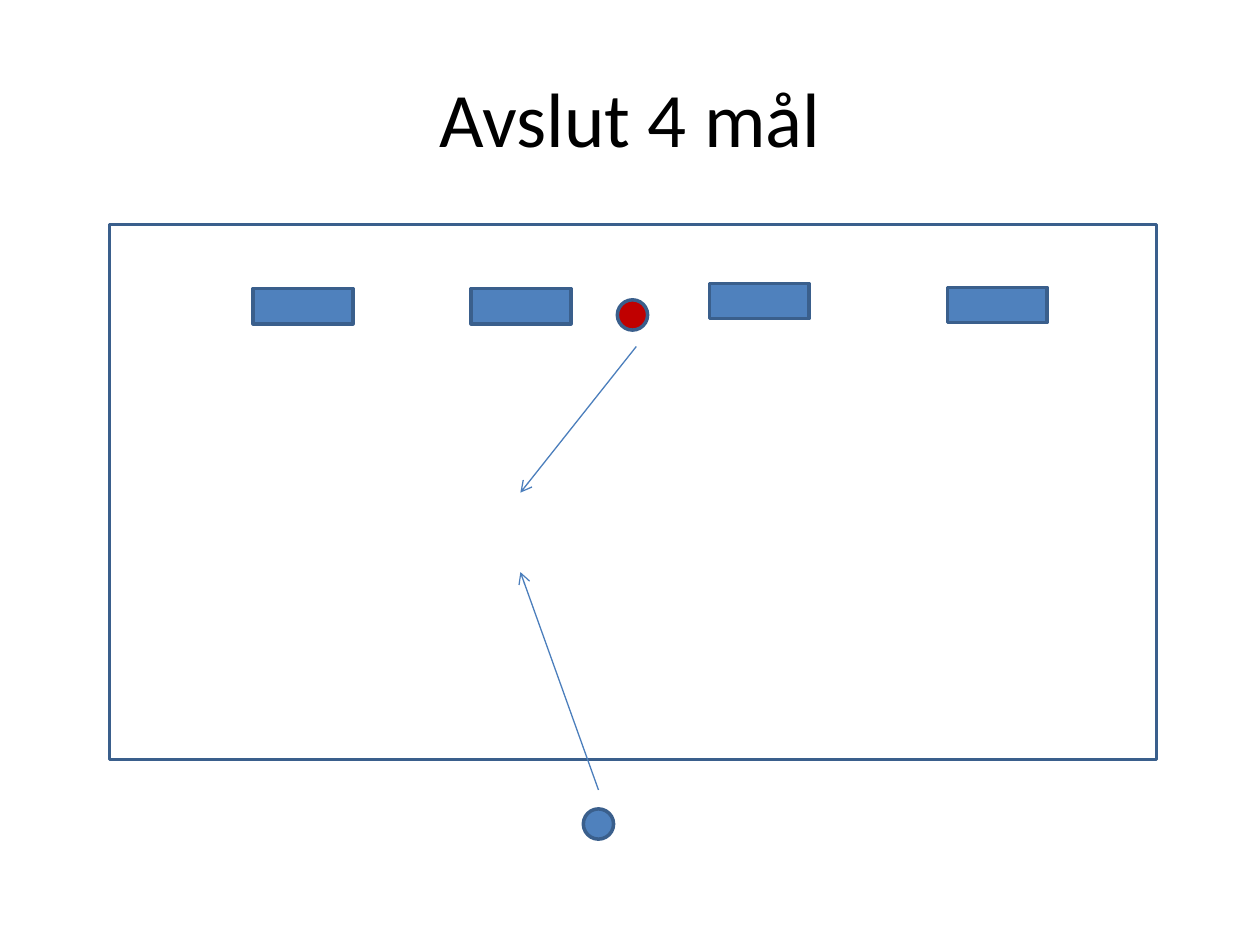
from lxml.etree import SubElement
from pptx import Presentation
from pptx.dml.color import RGBColor
from pptx.enum.shapes import MSO_CONNECTOR, MSO_SHAPE
from pptx.enum.text import MSO_ANCHOR, PP_ALIGN
from pptx.oxml.ns import qn
from pptx.util import Inches, Pt

BLUE, RED, OUTLINE, ARROW = "4F81BD", "C00000", "3A5F8C", "4B7EBC"


def color(value):
    return RGBColor.from_string(value)


def add_figure(page, kind, left, top, width, height, fill=None):
    figure = page.shapes.add_shape(
        kind, Inches(left), Inches(top), Inches(width), Inches(height))
    figure.shadow.inherit = False
    if fill:
        figure.fill.solid()
        figure.fill.fore_color.rgb = color(fill)
    else:
        figure.fill.background()
    figure.line.color.rgb = color(OUTLINE)
    figure.line.width = Pt(2)


deck = Presentation()
deck.slide_width, deck.slide_height = Inches(10), Inches(7.5)
page = deck.slides.add_slide(deck.slide_layouts[5])

# Title
title = page.shapes.title
title_place = {"left": 0.5, "top": 0.3, "width": 9, "height": 1.25}
for name, value in title_place.items():
    setattr(title, name, Inches(value))
title.text_frame.vertical_anchor = MSO_ANCHOR.MIDDLE
para = title.text_frame.paragraphs[0]
para.alignment = PP_ALIGN.CENTER
span = para.add_run()
span.text = "Avslut 4 mål"
for name, value in {"name": "Calibri", "size": Pt(44)}.items():
    setattr(span.font, name, value)
span.font.color.rgb = color("000000")

# Pitch
add_figure(page, MSO_SHAPE.RECTANGLE, 0.87, 1.78, 8.31, 4.25)

# Players
for left, top, fill in [(4.63, 6.42, BLUE), (4.9, 2.38, RED)]:
    add_figure(page, MSO_SHAPE.OVAL, left, top, 0.24, 0.24, fill)

# Four goals
for left, top in [(2.01, 2.29), (3.74, 2.29), (5.63, 2.25), (7.52, 2.28)]:
    add_figure(page, MSO_SHAPE.RECTANGLE, left, top, 0.79, 0.28, BLUE)

# Running paths
for start_x, start_y, end_x, end_y in [(4.75, 6.27, 4.13, 4.54),
                                       (5.05, 2.75, 4.13, 3.91)]:
    run = page.shapes.add_connector(
        MSO_CONNECTOR.STRAIGHT, Inches(start_x), Inches(start_y),
        Inches(end_x), Inches(end_y))
    run.line.color.rgb = color(ARROW)
    run.line.width = Pt(0.75)
    SubElement(run.line._get_or_add_ln(), qn("a:tailEnd"), type="arrow")
    SubElement(run._element.spPr, qn("a:effectLst"))

deck.save("out.pptx")
